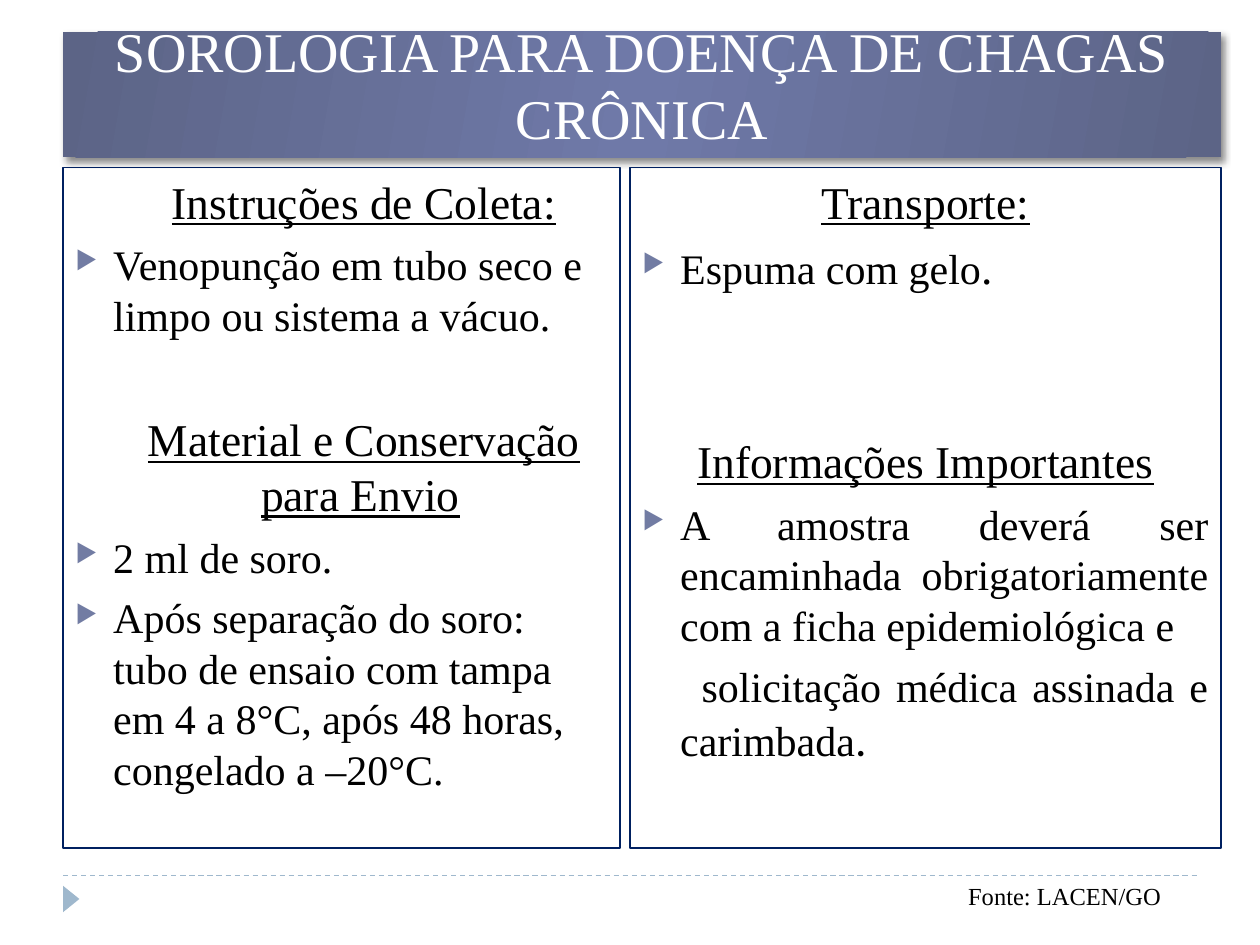
from lxml import etree
from pptx import Presentation
from pptx.dml.color import RGBColor
from pptx.enum.dml import MSO_LINE
from pptx.enum.shapes import MSO_CONNECTOR, MSO_SHAPE
from pptx.enum.text import MSO_ANCHOR, MSO_AUTO_SIZE, PP_ALIGN
from pptx.oxml import parse_xml
from pptx.oxml.ns import nsdecls, qn
from pptx.util import Inches, Pt

CENTER, LEFT, JUSTIFY = PP_ALIGN.CENTER, PP_ALIGN.LEFT, PP_ALIGN.JUSTIFY
BLACK = RGBColor(0x00, 0x00, 0x00)
WHITE = RGBColor(0xFF, 0xFF, 0xFF)
NAVY = RGBColor(0x00, 0x20, 0x60)
PALE_BLUE = RGBColor(0x9F, 0xB8, 0xCD)
BULLET_COLOR = RGBColor(0x72, 0x7C, 0xA3)
BANNER_EDGE = RGBColor(0x5C, 0x64, 0x86)
BANNER_MIDDLE = RGBColor(0x6F, 0x79, 0xA8)
SERIF = "Times New Roman"

TITLE = "SOROLOGIA PARA DOENÇA DE CHAGAS CRÔNICA"
SOURCE = "Fonte: LACEN/GO"

# style: (alignment, size, underline, bullet, first-line indent in inches)
STYLES = {
    "shifted heading": (CENTER, 26, True, False, 0.06),
    "heading": (CENTER, 26, True, False, -0.3),
    "item": (LEFT, 24, False, True, -0.3),
    "justified item": (JUSTIFY, 24, False, True, -0.3),
    "continuation": (JUSTIFY, 24, False, False, 0.17),
}
# paragraph: (style, text, space before in points, font of a larger full stop)
COLLECTION = [
    ("shifted heading", "Instruções de Coleta:", 0, None),
    ("item", "Venopunção em tubo seco e limpo ou sistema a vácuo.", 6, None),
    ("shifted heading", "Material e Conservação para Envio", 41, None),
    ("item", "2 ml de soro.", 6, None),
    ("item", "Após separação do soro: tubo de ensaio com tampa em 4 a 8°C, "
             "após 48 horas, congelado a –20°C.", 6, None),
]
TRANSPORT = [
    ("heading", "Transporte:", 0, None),
    ("item", "Espuma com gelo", 6, SERIF),
    ("heading", "Informações Importantes", 80, None),
    ("justified item", "A amostra deverá ser encaminhada obrigatoriamente "
                       "com a ficha epidemiológica e", 6, None),
    ("continuation", "solicitação médica assinada e carimbada", 6, "Calibri"),
]

MARGIN_LEFT, CONTENT_RIGHT = 0.5, 9.69
PANEL_TOP, PANEL_HEIGHT = 1.33, 5.4
PANELS = [(MARGIN_LEFT, 4.92, COLLECTION), (5, CONTENT_RIGHT, TRANSPORT)]
FOOTER_LINE_Y = 6.95


def format_run(run, size, color=BLACK, font=SERIF, underline=False):
    run.font.size = Pt(size)
    run.font.name = font
    run.font.color.rgb = color
    run.font.underline = underline


def set_indent(paragraph, first_line, bullet):
    properties = paragraph._p.get_or_add_pPr()
    properties.set("marL", str(Inches(0.3)))
    properties.set("indent", str(Inches(first_line)))
    if not bullet:
        etree.SubElement(properties, qn("a:buNone"))
        return
    color = etree.SubElement(properties, qn("a:buClr"))
    etree.SubElement(color, qn("a:srgbClr"), val=str(BULLET_COLOR))
    etree.SubElement(properties, qn("a:buSzPct"), val="60000")
    etree.SubElement(properties, qn("a:buChar"), char="▶")


def add_panel(slide, left, right, paragraphs):
    panel = slide.shapes.add_shape(
        MSO_SHAPE.RECTANGLE, Inches(left), Inches(PANEL_TOP),
        Inches(right - left), Inches(PANEL_HEIGHT))
    panel.shadow.inherit = False
    panel.fill.background()
    panel.line.color.rgb = NAVY
    panel.line.width = Pt(0.75)
    frame = panel.text_frame
    frame.word_wrap = True
    frame.vertical_anchor = MSO_ANCHOR.TOP
    for index, (style, text, space, stop_font) in enumerate(paragraphs):
        alignment, size, underline, bullet, first_line = STYLES[style]
        paragraph = frame.add_paragraph() if index else frame.paragraphs[0]
        paragraph.text = text
        paragraph.alignment = alignment
        paragraph.space_before = Pt(space)
        set_indent(paragraph, first_line, bullet)
        format_run(paragraph.runs[0], size, underline=underline)
        if stop_font:
            stop = paragraph.add_run()
            stop.text = "."
            format_run(stop, 26, font=stop_font)


def style_banner(shape):
    """Give the title a three-stop gradient and a soft shadow."""
    stops = "".join(
        f'<a:gs pos="{position}"><a:srgbClr val="{color}"/></a:gs>'
        for position, color in ((0, BANNER_EDGE), (50000, BANNER_MIDDLE),
                                (100000, BANNER_EDGE)))
    for xml in (
        f'<a:gradFill {nsdecls("a")}><a:gsLst>{stops}</a:gsLst>'
        '<a:lin ang="600000" scaled="0"/></a:gradFill>',
        f'<a:ln {nsdecls("a")}><a:noFill/></a:ln>',
        f'<a:effectLst {nsdecls("a")}><a:outerShdw blurRad="50800" dist="38100" '
        'dir="3600000"><a:srgbClr val="000000"><a:alpha val="45000"/>'
        '</a:srgbClr></a:outerShdw></a:effectLst>',
    ):
        shape._element.spPr.append(parse_xml(xml))


def add_title(slide):
    title = slide.shapes.title
    title.left, title.top = Inches(MARGIN_LEFT), Inches(0.25)
    title.width, title.height = Inches(CONTENT_RIGHT - MARGIN_LEFT), Inches(1)
    style_banner(title)
    frame = title.text_frame
    frame.text = TITLE
    frame.word_wrap = True
    frame.auto_size = MSO_AUTO_SIZE.NONE
    frame.vertical_anchor = MSO_ANCHOR.BOTTOM
    frame.paragraphs[0].alignment = CENTER
    format_run(frame.paragraphs[0].runs[0], 32, WHITE)


def add_footer(slide):
    line = slide.shapes.add_connector(
        MSO_CONNECTOR.STRAIGHT, Inches(MARGIN_LEFT), Inches(FOOTER_LINE_Y),
        Inches(9.5), Inches(FOOTER_LINE_Y))
    line.line.color.rgb = PALE_BLUE
    line.line.width = Pt(0.75)
    line.line.dash_style = MSO_LINE.DASH
    etree.SubElement(line._element.spPr, qn("a:effectLst"))

    marker = slide.shapes.add_shape(
        MSO_SHAPE.ISOSCELES_TRIANGLE, Inches(0.46), Inches(7.07),
        Inches(0.21), Inches(0.13))
    marker.rotation = 90
    marker.shadow.inherit = False
    marker.fill.solid()
    marker.fill.fore_color.rgb = PALE_BLUE
    marker.line.fill.background()

    box = slide.shapes.add_textbox(
        Inches(7.58), Inches(6.94), Inches(1.74), Inches(0.34))
    frame = box.text_frame
    frame.text = SOURCE
    frame.word_wrap = False
    frame.auto_size = MSO_AUTO_SIZE.SHAPE_TO_FIT_TEXT
    frame.paragraphs[0].alignment = CENTER
    format_run(frame.paragraphs[0].runs[0], 14)


def main():
    presentation = Presentation()
    presentation.slide_width, presentation.slide_height = Inches(10), Inches(7.5)
    slide = presentation.slides.add_slide(presentation.slide_layouts[5])
    add_title(slide)
    for left, right, paragraphs in PANELS:
        add_panel(slide, left, right, paragraphs)
    add_footer(slide)
    presentation.save("out.pptx")


if __name__ == "__main__":
    main()
